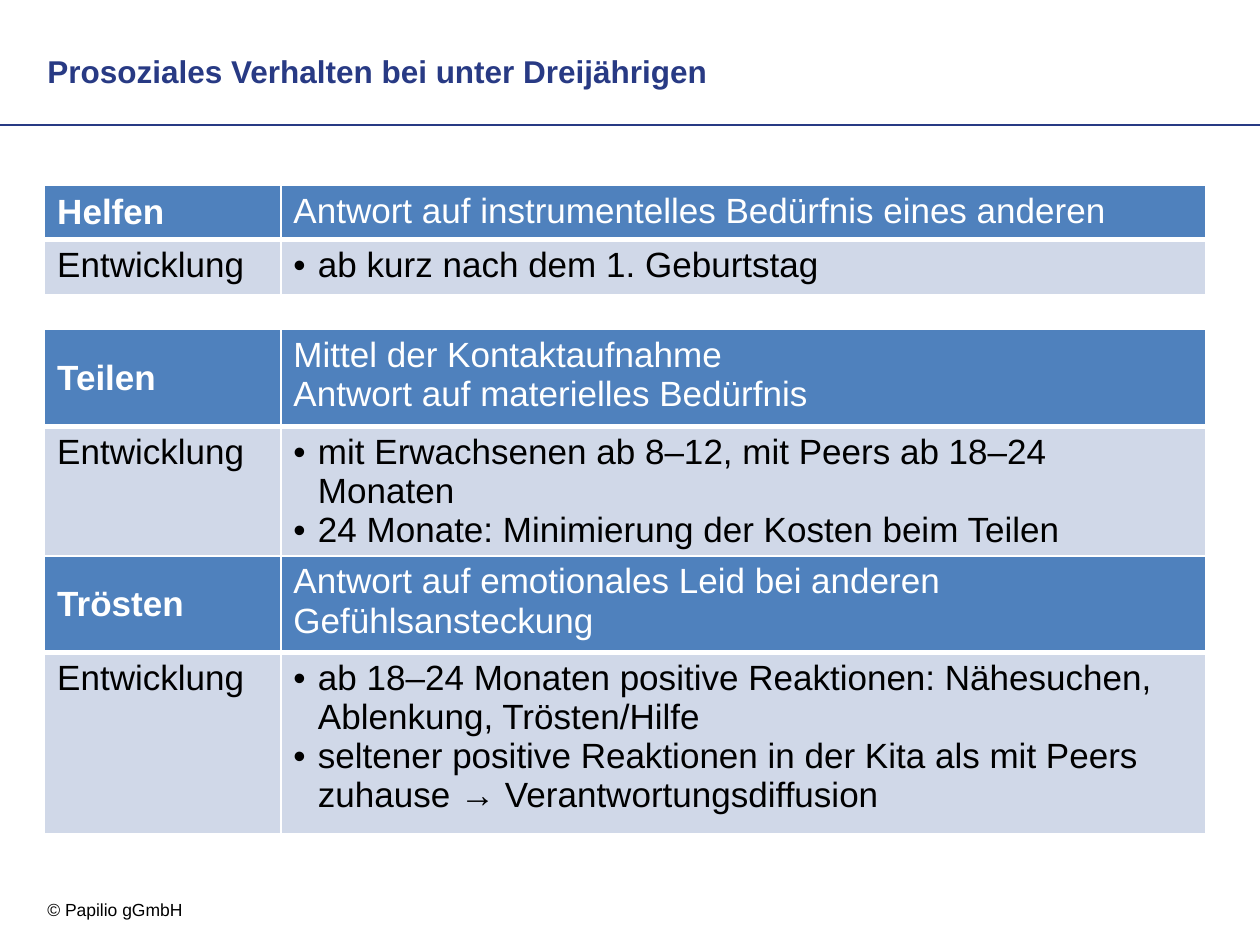
from lxml import etree
from pptx import Presentation
from pptx.dml.color import RGBColor
from pptx.enum.shapes import MSO_CONNECTOR
from pptx.enum.text import MSO_ANCHOR
from pptx.oxml.ns import qn
from pptx.util import Pt

STRAIGHT = MSO_CONNECTOR.STRAIGHT
TOP, MIDDLE = MSO_ANCHOR.TOP, MSO_ANCHOR.MIDDLE
NAVY = RGBColor(0x28, 0x3A, 0x84)
BLUE = RGBColor(0x4F, 0x81, 0xBD)
PALE = RGBColor(0xD0, 0xD8, 0xE8)
WHITE = RGBColor(0xFF, 0xFF, 0xFF)
BLACK = RGBColor(0, 0, 0)

LEFT = 25.5
COLS = (135, 528.5)
ROW_H = 29.5
TABLES = [
    (105.8, "Helfen", ["Antwort auf instrumentelles Bedürfnis eines anderen"],
     ["ab kurz nach dem 1. Geburtstag"], 0),
    (188.3, "Teilen", ["Mittel der Kontaktaufnahme", "Antwort auf materielles Bedürfnis"],
     ["mit Erwachsenen ab 8–12, mit Peers ab 18–24 Monaten",
      "24 Monate: Minimierung der Kosten beim Teilen"], 1),
    (317.7, "Trösten", ["Antwort auf emotionales Leid bei anderen", "Gefühlsansteckung"],
     ["ab 18–24 Monaten positive Reaktionen: Nähesuchen, Ablenkung, Trösten/Hilfe",
      "seltener positive Reaktionen in der Kita als mit Peers zuhause → Verantwortungsdiffusion"], 1),
]


def style(p, size, color, bold=False):
    for r in p.runs:
        r.font.name = "Arial"
        r.font.size = Pt(size)
        r.font.bold = bold
        r.font.color.rgb = color


def set_borders(cell, top, bottom):
    tcPr = cell._tc.get_or_add_tcPr()
    for side, width in (("L", 1), ("R", 1), ("T", top), ("B", bottom)):
        ln = etree.SubElement(tcPr, qn(f"a:ln{side}"), w=str(Pt(width)))
        fill = etree.SubElement(ln, qn("a:solidFill"))
        etree.SubElement(fill, qn("a:srgbClr"), val=str(WHITE))


prs = Presentation()
prs.slide_width, prs.slide_height = Pt(720), Pt(540)
s = prs.slides.add_slide(prs.slide_layouts[6])

rule = s.shapes.add_connector(STRAIGHT, Pt(0), Pt(71.5), Pt(720), Pt(71.5))
rule.line.color.rgb = NAVY
rule.line.width = Pt(1.5)
etree.SubElement(rule._element.spPr, qn("a:effectLst"))

for text, top, width, height, size, color, bold in (
    ("© Papilio gGmbH", 510, 156, 19.5, 10, BLACK, False),
    ("Prosoziales Verhalten bei unter Dreijährigen", 26, 550, 28, 18, NAVY, True),
):
    sp = s.shapes.add_textbox(Pt(20), Pt(top), Pt(width), Pt(height))
    tf = sp.text_frame
    tf.word_wrap = True
    tf.text = text
    style(tf.paragraphs[0], size, color, bold)

for top, name, meaning, steps, level in TABLES:
    sp = s.shapes.add_table(2, 2, Pt(LEFT), Pt(top), Pt(sum(COLS)), Pt(2 * ROW_H))
    table = sp.table
    for column, width in zip(table.columns, COLS):
        column.width = Pt(width)
    rows = ([name], meaning), (["Entwicklung"], steps)
    for i, row in enumerate(rows):
        table.rows[i].height = Pt(ROW_H)
        for j, lines in enumerate(row):
            cell = table.cell(i, j)
            set_borders(cell, 3 if i else 1, 1 if i else 3)
            cell.fill.solid()
            cell.fill.fore_color.rgb = PALE if i else BLUE
            cell.vertical_anchor = MIDDLE if i == j == 0 else TOP
            cell.text_frame.text = "\n".join(lines)
            for p in cell.text_frame.paragraphs:
                if i and j:
                    p.level = level
                    pPr = p._p.get_or_add_pPr()
                    pPr.set("marL", str(Pt(14)))
                    pPr.set("indent", str(Pt(-14)))
                    etree.SubElement(pPr, qn("a:buFont"), typeface="Arial")
                    etree.SubElement(pPr, qn("a:buChar"), char="•")
                style(p, 20, BLACK if i else WHITE, i == j == 0)

prs.save("out.pptx")
